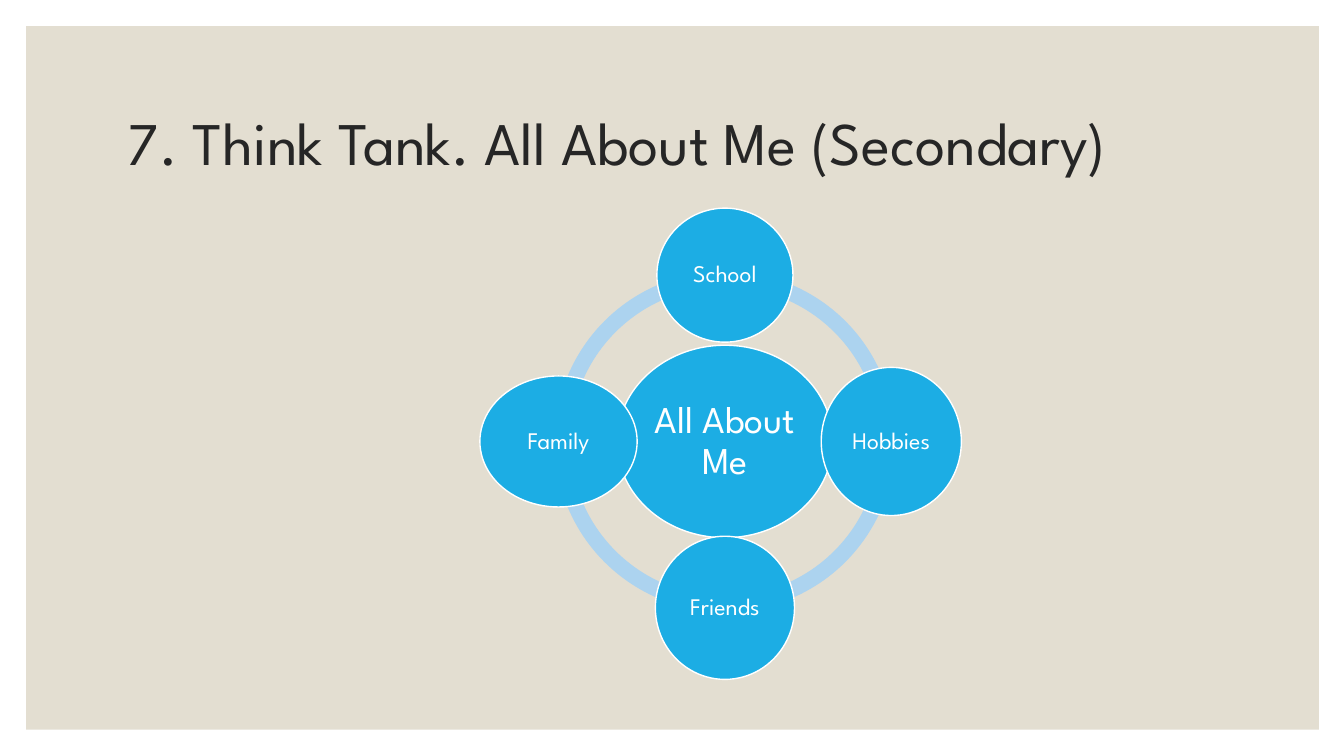
from math import cos, radians, sin

from pptx import Presentation
from pptx import util as u
from pptx.dml.color import RGBColor
from pptx.enum import shapes, text

COLORS = {
    "panel": "E3DED1",
    "title": "262626",
    "ring": "ACD3EF",
    "bubble": "1CADE4",
    "white": "FFFFFF",
}
FONT = "League Spartan"
QUARTER_TURN = 54
TOPICS = [
    ("School", 1.35, 1.33, -90),
    ("Hobbies", 1.39, 1.47, 0),
    ("Friends", 1.38, 1.42, 90),
    ("Family", 1.56, 1.3, 180),
]


def write_text(frame, wording, size, color, align=text.PP_ALIGN.LEFT, inset=0.1):
    """Write one vertically centred paragraph into a text frame."""
    frame.word_wrap = True
    frame.vertical_anchor = text.MSO_ANCHOR.MIDDLE
    frame.margin_left = frame.margin_right = u.Inches(inset)
    frame.margin_top = frame.margin_bottom = u.Inches(min(inset, 0.05))
    paragraph = frame.paragraphs[0]
    paragraph.alignment = align
    paragraph.line_spacing = 0.9
    run = paragraph.add_run()
    run.text = wording
    run.font.name = FONT
    run.font.size = u.Pt(size)
    run.font.color.rgb = RGBColor.from_string(COLORS[color])


def add_filled(slide, preset, box, fill, outline=None):
    """Add a flat preset shape in a box of inches."""
    shape = slide.shapes.add_shape(preset, *map(u.Inches, box))
    shape.shadow.inherit = False
    shape.fill.solid()
    shape.fill.fore_color.rgb = RGBColor.from_string(COLORS[fill])
    if outline:
        shape.line.color.rgb = RGBColor.from_string(COLORS[outline])
        shape.line.width = u.Pt(1)
    else:
        shape.line.fill.background()
    return shape


def add_bubble(slide, center, size, wording, font_size, inset):
    """Add a labelled ellipse around a centre point."""
    (x, y), (width, height) = center, size
    box = (x - width / 2, y - height / 2, width, height)
    bubble = add_filled(slide, shapes.MSO_SHAPE.OVAL, box, "bubble", "white")
    write_text(bubble.text_frame, wording, font_size, "white",
               align=text.PP_ALIGN.CENTER, inset=inset)


def add_title(slide, box):
    """Add the slide heading."""
    heading = slide.shapes.add_textbox(*map(u.Inches, box))
    write_text(heading.text_frame, "7. Think Tank. All About Me (Secondary)", 43.2, "title")


def add_topic_wheel(slide, box):
    """Add the ring, the central bubble and the topics that orbit it."""
    left, top, width, height = box
    center = (left + width / 2, top + height / 2)
    orbit = width / 2 - 0.04
    for quarter in (2, 1, 0, 3):
        arc = add_filled(slide, shapes.MSO_SHAPE.BLOCK_ARC, box, "ring")
        arc.adjustments[0] = quarter * QUARTER_TURN
        arc.adjustments[1] = (quarter + 1) % 4 * QUARTER_TURN
        arc.adjustments[2] = 0.046
    add_bubble(slide, center, (2.14, 1.91), "All About Me", 27, 0.04)
    for topic, topic_width, topic_height, degrees in TOPICS:
        angle = radians(degrees)
        place = (center[0] + orbit * cos(angle), center[1] + orbit * sin(angle))
        add_bubble(slide, place, (topic_width, topic_height), topic, 17, 0.02)


def main():
    """Build and save the slide."""
    deck = Presentation()
    deck.slide_width, deck.slide_height = u.Inches(13.33), u.Inches(7.5)
    slide = deck.slides.add_slide(deck.slide_layouts[6])
    add_filled(slide, shapes.MSO_SHAPE.RECTANGLE, (0.26, 0.26, 12.82, 6.98), "panel")
    add_title(slide, (1.17, 0.7, 11, 1.5))
    add_topic_wheel(slide, (5.5, 2.69, 3.38, 3.38))
    deck.save("out.pptx")


if __name__ == "__main__":
    main()
